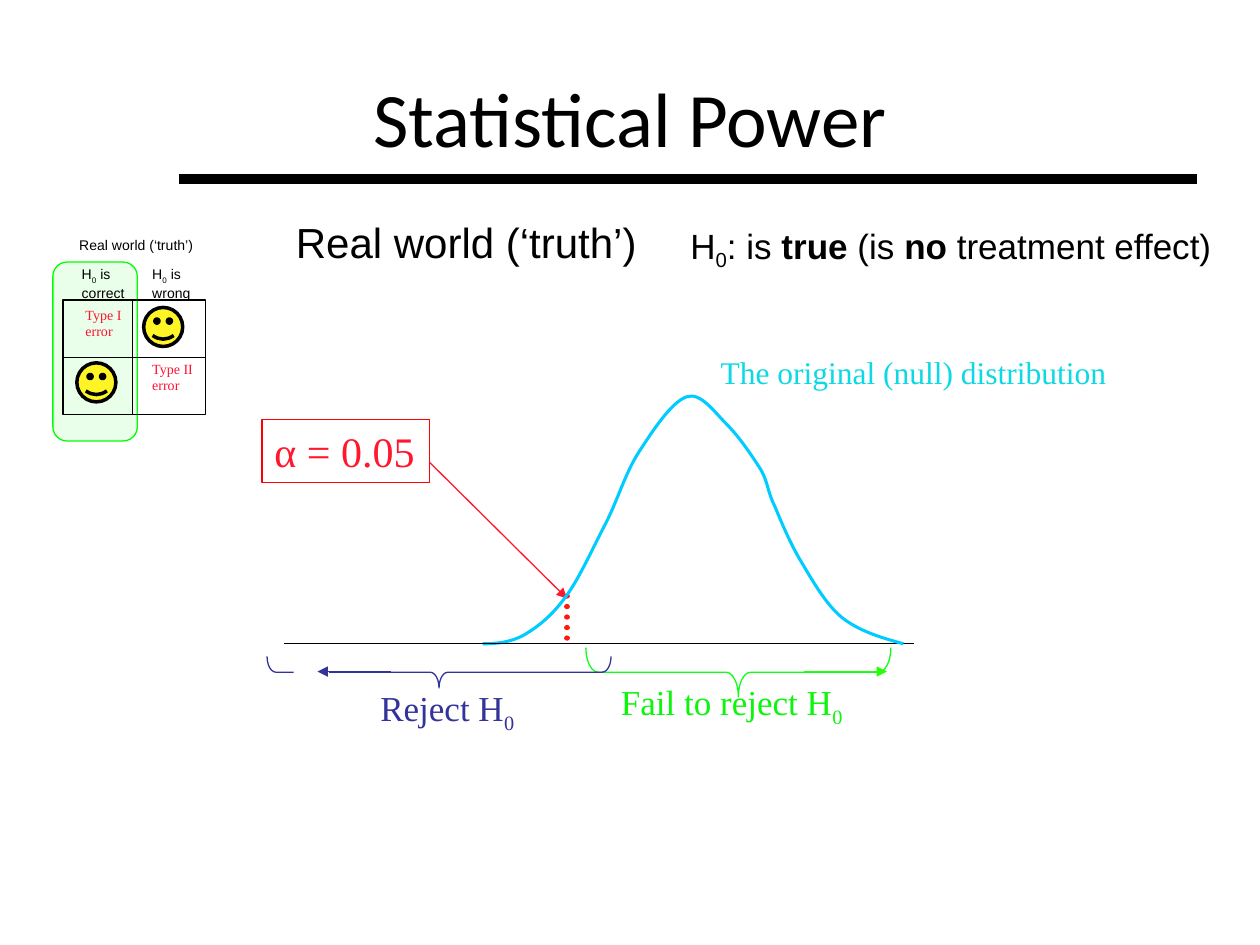
import pptx
import pptx.dml.color
import pptx.enum.dml
import pptx.enum.shapes
import pptx.enum.text
import pptx.oxml
import pptx.oxml.ns
import pptx.util

Inches = pptx.util.Inches
Pt = pptx.util.Pt
SHAPES = pptx.enum.shapes.MSO_SHAPE
ALIGN = pptx.enum.text.PP_ALIGN
ANCHOR = pptx.enum.text.MSO_ANCHOR
SERIF = "Times New Roman"

COLOURS = {
    "black": "000000", "white": "FFFFFF", "smiley": "FFF526",
    "highlight": "CCFFCC", "highlight_edge": "00FF00",
    "fail_text": "0CF50C", "fail_brace": "0EFF15", "fail_arrow": "27FF09",
    "reject": "333399", "error": "FF1131", "alpha": "FF182D",
    "alpha_edge": "FF0000", "cutoff": "FF180F",
    "curve": "00CCFF", "curve_text": "0CD9E3",
}


def colour(name):
    return pptx.dml.color.RGBColor.from_string(COLOURS[name])


def add_child(parent, tag, **attributes):
    child = parent.makeelement(pptx.oxml.ns.qn(tag), attributes)
    parent.append(child)
    return child


def add_text(page, box, spans, size=8, font="Arial", ink="black", wrap=True,
             align=ALIGN.LEFT, anchor=ANCHOR.TOP, spacing=None, indent=0.1):
    """Each span is a string or a (string, "sub" or "bold") pair."""
    label = page.shapes.add_textbox(*map(Inches, box))
    frame = label.text_frame
    frame.word_wrap = wrap
    frame.vertical_anchor = anchor
    frame.margin_left = Inches(indent)
    para = frame.paragraphs[0]
    para.alignment = align
    para.line_spacing = spacing
    for item in spans:
        words, style = (item, None) if isinstance(item, str) else item
        span = para.add_run()
        span.text = words
        span.font.size = Pt(size)
        span.font.name = font
        span.font.color.rgb = colour(ink)
        span.font.bold = style == "bold"
        if style == "sub":
            span.font._element.set("baseline", "-25000")


def paint(shape, fill=None, line=None, weight=0.75):
    shape.shadow.inherit = False
    if fill:
        shape.fill.solid()
        shape.fill.fore_color.rgb = colour(fill)
    else:
        shape.fill.background()
    if line:
        shape.line.color.rgb = colour(line)
        shape.line.width = Pt(weight)
    else:
        shape.line.fill.background()


def add_shape(page, kind, box, adjust=None, **style):
    shape = page.shapes.add_shape(kind, *map(Inches, box))
    if adjust is not None:
        shape.adjustments[0] = adjust
    paint(shape, **style)
    return shape


def add_line(page, start, end, ink="black", weight=0.75, arrow=False, dots=False):
    line = page.shapes.add_connector(
        pptx.enum.shapes.MSO_CONNECTOR.STRAIGHT, *map(Inches, (*start, *end)))
    line.line.color.rgb = colour(ink)
    line.line.width = Pt(weight)
    outline = line.line._get_or_add_ln()
    if dots:
        line.line.dash_style = pptx.enum.dml.MSO_LINE.ROUND_DOT
        outline.set("cap", "rnd")
    if arrow:
        add_child(outline, "a:tailEnd", type="triangle")
    add_child(line._element.spPr, "a:effectLst")


def add_brace(page, box, adjust, ink):
    """A brace that points down and fills the box."""
    left, top, width, height = box
    turned = (left + (width - height) / 2, top + (height - width) / 2, height, width)
    add_shape(page, SHAPES.LEFT_BRACE, turned, adjust, line=ink).rotation = 270


def add_curve(page, points, ink, weight):
    """Cubic curve: a start point, then three points for each segment."""
    start, *others = [(Inches(x), Inches(y)) for x, y in points]
    builder = page.shapes.build_freeform(*start)
    builder.add_line_segments(others, close=False)
    curve = builder.convert_to_shape()
    paint(curve, line=ink, weight=weight)
    steps = curve._element.xpath(".//a:lnTo")
    for first in range(0, len(steps), 3):
        segment = steps[first].makeelement(pptx.oxml.ns.qn("a:cubicBezTo"), {})
        steps[first].addprevious(segment)
        for step in steps[first:first + 3]:
            segment.append(step[0])
            step.getparent().remove(step)


def heading(page, box):
    left, top, width, height = box
    add_line(page, (left + 0.92, top + 1.12), (left + width, top + 1.12), weight=6)
    add_text(page, box, ["Statistical Power"], size=44, font="Calibri",
             align=ALIGN.CENTER, anchor=ANCHOR.MIDDLE)
    add_text(page, (left + 4.88, top + 1.43, 4.42, 0.43),
             ["H", ("0", "sub"), ": is ", ("true", "bold"), " (is ",
              ("no", "bold"), " treatment effect)"], size=20)
    add_text(page, (left + 1.75, top + 1.37, 3.33, 0.5),
             ["Real world (‘truth’)"], size=24)


def decision_ranges(page, box):
    left, top, width, height = box
    middle = top + 0.19
    # Fail to reject
    add_text(page, (left + 2.71, top + 0.34, 2.75, 0.27),
             ["Fail to reject H", ("0", "sub")],
             size=20, font=SERIF, ink="fail_text", spacing=0.5)
    add_brace(page, (left + 2.53, top, 2.42, 0.39), 0.25, "fail_brace")
    add_line(page, (left + 4.26, middle), (left + 4.92, middle), "fail_arrow", arrow=True)
    # Reject, with a gap in its brace
    add_text(page, (left + 0.8, top + 0.26, 1.42, 0.43), ["Reject H", ("0", "sub")],
             size=20, font=SERIF, ink="reject")
    add_brace(page, (left, top + 0.07, 2.73, 0.25), 0.28, "reject")
    add_shape(page, SHAPES.RECTANGLE, (left + 0.21, top - 0.06, 0.28, 0.33), fill="white")
    add_line(page, (left + 0.98, middle), (left + 0.4, middle), "reject", arrow=True)


def truth_table(page, box):
    left, top, width, height = box
    right, bottom = left + width, top + height
    split, middle = left + 0.55, top + height / 2
    # Highlighted column
    column = add_shape(page, SHAPES.ROUNDED_RECTANGLE,
                       (left - 0.08, top - 0.3, 0.67, 1.42), 0.167,
                       fill="highlight", line="highlight_edge")
    add_child(column._element.xpath("./p:spPr/a:solidFill/a:srgbClr")[0],
              "a:alpha", val="40000")
    # Labels
    add_text(page, (left + 0.03, top - 0.55, 1.15, 0.23), ["Real world (‘truth’)"])
    for offset, wide, answer in ((0.05, 0.61, "correct"), (0.61, 0.52, "wrong")):
        add_text(page, (left + offset, top - 0.32, wide, 0.37),
                 ["H", ("0", "sub"), f" is {answer}"])
    # Right and wrong decisions
    for across, down in ((0.64, 0.06), (0.11, 0.5)):
        add_shape(page, SHAPES.SMILEY_FACE, (left + across, top + down, 0.31, 0.31),
                  fill="smiley", line="black", weight=2)
    for across, down, kind in ((0.08, 0, "I"), (0.61, 0.43, "II")):
        add_text(page, (left + across, top + down, 0.54, 0.37),
                 [f"Type {kind} error"], font=SERIF, ink="error")
    # Grid
    add_shape(page, SHAPES.RECTANGLE, box, line="black")
    add_line(page, (left, middle), (right, middle))
    add_line(page, (split, top), (split, bottom))


def alpha_callout(page, box):
    left, top, width, height = box
    cutoff = left + 2.42
    add_line(page, (cutoff, top + 1.4), (cutoff, top + 1.78), "cutoff", 3, dots=True)
    add_shape(page, SHAPES.RECTANGLE, box, line="alpha_edge")
    add_text(page, (left, top, width + 0.02, height), ["α = 0.05"],
             size=24, font=SERIF, ink="alpha", wrap=False)
    add_line(page, (left + width, top + 0.34), (cutoff, top + 1.42), "alpha", arrow=True)


def null_distribution(page, box):
    left, top, width, height = box
    base = top + height
    # Offsets from the left end of the curve and heights above the axis
    outline = [
        (0, 0), (0.11, 0), (0.22, 0.01), (0.33, 0.07),
        (0.43, 0.13), (0.54, 0.21), (0.65, 0.36),
        (0.76, 0.5), (0.87, 0.75), (0.97, 0.94),
        (1.07, 1.13), (1.13, 1.35), (1.24, 1.52),
        (1.35, 1.69), (1.5, 1.92), (1.62, 1.96),
        (1.73, 2), (1.84, 1.84), (1.94, 1.74),
        (2.04, 1.64), (2.14, 1.49), (2.21, 1.38),
        (2.27, 1.27), (2.26, 1.21), (2.32, 1.09),
        (2.37, 0.97), (2.44, 0.8), (2.53, 0.65),
        (2.62, 0.5), (2.72, 0.32), (2.85, 0.21),
        (2.99, 0.1), (3.16, 0.05), (3.34, 0),
    ]
    add_line(page, (left - 0.66, base), (left + 3.42, base))
    add_curve(page, [(left + x, base - y) for x, y in outline], "curve", 1.75)
    add_text(page, (left + 1.67, top - 0.36, 3.5, 0.4),
             ["The original (null) distribution"],
             size=18, font=SERIF, ink="curve_text", indent=0.22)
    add_line(page, (left - 1.58, base), (left + 3.17, base))


def main():
    deck = pptx.Presentation()
    deck.slide_width, deck.slide_height = Inches(10), Inches(7.5)
    page = deck.slides.add_slide(deck.slide_layouts[6])
    heading(page, (0.5, 0.3, 9, 1.25))
    decision_ranges(page, (2.12, 5.14, 4.95, 0.7))
    truth_table(page, (0.5, 2.38, 1.13, 0.91))
    alpha_callout(page, (2.08, 3.33, 1.33, 0.5))
    null_distribution(page, (3.83, 3.11, 3.34, 2))
    deck.save("out.pptx")


if __name__ == "__main__":
    main()
